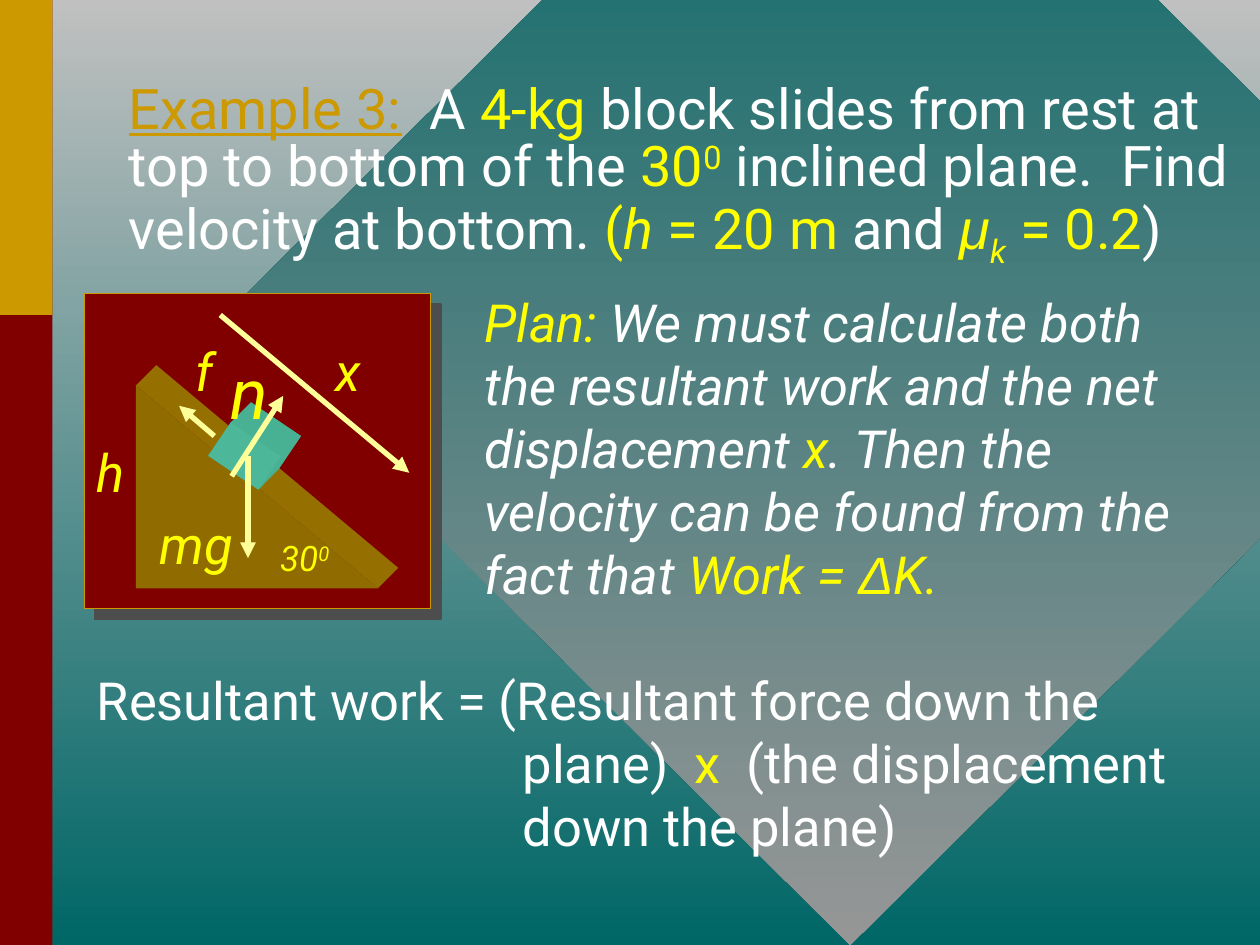
from math import cos, radians, sin

from lxml.etree import SubElement
from pptx import Presentation
from pptx.dml.color import RGBColor
from pptx.enum.shapes import MSO_CONNECTOR, MSO_SHAPE
from pptx.enum.text import MSO_ANCHOR, MSO_AUTO_SIZE, PP_ALIGN
from pptx.oxml.ns import qn
from pptx.util import Cm, Pt

COLORS = {
    "gray": "C0C0C0", "mid_gray": "969696", "teal": "006666",
    "maroon": "800000", "gold": "CC9900", "white": "FFFFFF",
    "yellow": "FFFF00", "arrow": "FFFF99", "shadow": "4D4D4D",
    "wedge": "8F6B00", "wedge_side": "957000",
    "block": "4DB899", "block_side": "48B093",
}
DEPTH = 0.41


def rgb(name):
    """Return the named palette colour."""
    return RGBColor.from_string(COLORS[name])


def set_gradient(fill, top, bottom):
    """Fill from the top colour down to the bottom colour."""
    fill.gradient()
    fill.gradient_angle = 270
    for stop, name in zip(fill.gradient_stops, (top, bottom)):
        stop.color.rgb = rgb(name)


def add_solid(shapes, kind, box, color):
    """Add a borderless flat shape; box is in centimetres."""
    sp = shapes.add_shape(kind, *map(Cm, box))
    sp.shadow.inherit = False
    sp.fill.solid()
    sp.fill.fore_color.rgb = rgb(color)
    sp.line.fill.background()
    return sp


def add_runs(p, size, runs, italic=False):
    """Add (text, colour, options) runs to a paragraph."""
    for text, color, opts in runs:
        r = p.add_run()
        r.text = text
        r.font.size = Pt(size)
        r.font.name = opts.get("font", "Roboto")
        r.font.color.rgb = rgb(color)
        r.font.italic = opts.get("italic", italic)
        r.font.underline = opts.get("underline", False)
        if "baseline" in opts:
            r.font._element.set("baseline", str(opts["baseline"] * 1000))


def add_text(shapes, box, size, runs, italic=False, wrap=True):
    """Add a text box and return it."""
    sp = shapes.add_textbox(*map(Cm, box))
    tf = sp.text_frame
    tf.word_wrap = wrap
    tf.auto_size = MSO_AUTO_SIZE.SHAPE_TO_FIT_TEXT
    add_runs(tf.paragraphs[0], size, runs, italic)
    return sp


def add_outline(shapes, points, color):
    """Add a closed polygon with points in centimetres."""
    pts = [(Cm(x), Cm(y)) for x, y in points]
    builder = shapes.build_freeform(*pts[0])
    builder.add_line_segments(pts[1:])
    sp = builder.convert_to_shape()
    sp.shadow.inherit = False
    sp.fill.solid()
    sp.fill.fore_color.rgb = rgb(color)
    sp.line.fill.background()


def add_arrow(shapes, start, end):
    """Add a force arrow from start to end, in centimetres."""
    cx = shapes.add_connector(MSO_CONNECTOR.STRAIGHT, *map(Cm, start + end))
    cx.line.color.rgb = rgb("arrow")
    cx.line.width = Pt(3)
    SubElement(cx.line._get_or_add_ln(), qn("a:tailEnd"), type="triangle")
    SubElement(cx._element.spPr, qn("a:effectLst"))


def add_backdrop(s, width, height):
    """Draw the gradient background, diamond and left band."""
    set_gradient(s.background.fill, "gray", "teal")
    diamond = add_solid(s.shapes, MSO_SHAPE.DIAMOND,
                        (4.44, -6.15, width, 25.2), "teal")
    set_gradient(diamond.fill, "teal", "mid_gray")
    add_solid(s.shapes, MSO_SHAPE.RECTANGLE, (0, 0, 1.06, height), "maroon")
    add_solid(s.shapes, MSO_SHAPE.RECTANGLE, (0, 0, 1.06, height / 3), "gold")


def add_title(s, box):
    """Place and fill the title with the problem statement."""
    sp = s.shapes.title
    s.shapes._spTree.append(sp._element)
    sp.left, sp.top, sp.width, sp.height = map(Cm, box)
    tf = sp.text_frame
    tf.word_wrap = True
    tf.auto_size = MSO_AUTO_SIZE.NONE
    tf.vertical_anchor = MSO_ANCHOR.MIDDLE
    p = tf.paragraphs[0]
    p.alignment = PP_ALIGN.LEFT
    p.line_spacing = 0.85
    add_runs(p, 32, [
        ("Example 3:", "gold", {"underline": True}),
        (" ", "gold", {}),
        (" A ", "white", {}),
        ("4-kg", "yellow", {}),
        (" block slides from rest at top to bottom of the ", "white", {}),
        ("30", "yellow", {}),
        ("0", "yellow", {"baseline": 30}),
        (" inclined plane.  Find velocity at bottom. ", "white", {}),
        ("(", "yellow", {}),
        ("h", "yellow", {"italic": True}),
        (" = 20 m", "yellow", {}),
        (" and ", "white", {}),
        ("μ", "yellow", {"italic": True, "font": "Arial"}),
        ("k", "yellow", {"italic": True, "baseline": -25}),
        (" = 0.2", "yellow", {}),
        (")", "white", {}),
    ])


def add_panel(shapes, box):
    """Add the framed panel with its hard offset shadow."""
    sp = add_solid(shapes, MSO_SHAPE.RECTANGLE, box, "maroon")
    sp.line.color.rgb = rgb("gold")
    sp.line.width = Pt(0.75)
    effects = sp._element.spPr.find(qn("a:effectLst"))
    shadow = SubElement(effects, qn("a:outerShdw"), dist=str(Pt(8.5)),
                        dir="2700000", algn="ctr", rotWithShape="0")
    SubElement(shadow, qn("a:srgbClr"), val=COLORS["shadow"])


def add_diagram(s, box):
    """Draw the inclined plane with its block, forces and labels."""
    shapes = s.shapes.add_group_shape().shapes
    left, top = box[:2]

    def at(x, y):
        return left + x, top + y

    def back(point):
        return point[0] + DEPTH, point[1] - DEPTH

    add_panel(shapes, box)
    x, y, w, h = 1.04, 1.85, 4.88, 4.09
    peak, toe = at(x, y), at(x + w, y + h)
    add_outline(shapes, [peak, back(peak), back(toe), toe], "wedge_side")
    add_solid(shapes, MSO_SHAPE.RIGHT_TRIANGLE, (*peak, w, h), "wedge")

    x, y, w, h, tilt = 2.62, 2.87, 1.22, 0.81, 34
    c, d = cos(radians(tilt)), sin(radians(tilt))
    a, b, e, f = [
        at(x + w / 2 + (i * w * c - j * h * d) / 2,
           y + h / 2 + (i * w * d + j * h * c) / 2)
        for i, j in ((-1, -1), (1, -1), (1, 1), (-1, 1))]
    add_outline(shapes, [f, a, back(a), back(b), back(e), e], "block_side")
    block = add_solid(shapes, MSO_SHAPE.RECTANGLE, (*at(x, y), w, h), "block")
    block.rotation = tilt

    for start, end in (((3.3, 3.28), (3.3, 5.33)), ((2.97, 3.68), (4.01, 2.06)),
                       ((2.62, 2.87), (1.91, 2.26)), ((2.74, 0.43), (6.55, 3.61))):
        add_arrow(shapes, at(*start), at(*end))

    for text, size, x, y, w, h in (
            ("h", 30, 0, 2.82, 1.04, 1.52), ("30", 20, 3.66, 4.78, 1.57, 1.09),
            ("n", 40, 2.62, 0.99, 1.4, 1.96), ("f", 30, 1.91, 0.79, 1.04, 1.52),
            ("mg", 30, 0.86, 4.27, 2.79, 1.52), ("x", 30, 4.7, 0.79, 1.22, 1.52)):
        runs = [(text, "yellow", {})]
        if text == "30":
            runs.append(("0", "yellow", {"baseline": 30}))
        sp = add_text(shapes, (*at(x, y), w, h), size, runs, True, False)
        sp.text_frame.vertical_anchor = MSO_ANCHOR.MIDDLE
        sp.text_frame.paragraphs[0].alignment = PP_ALIGN.CENTER


def add_plan(s, box):
    """Add the plan for solving the problem."""
    sp = add_text(s.shapes, box, 30, [
        ("Plan: ", "yellow", {}),
        ("We must calculate both the resultant work and the net displacement ",
         "white", {}),
        ("x", "yellow", {}),
        (". Then the velocity can be found from the fact that ", "white", {}),
        ("Work = ", "yellow", {}),
        ("Δ", "yellow", {"font": "Arial"}),
        ("K.", "yellow", {}),
    ], True)
    sp.text_frame.vertical_anchor = MSO_ANCHOR.MIDDLE


def add_work(s, box):
    """Add the resultant work statement with a hanging indent."""
    sp = add_text(s.shapes, box, 30, [
        ("Resultant work = (Resultant force down the plane)  ", "white", {}),
        ("x", "yellow", {}),
        ("  (the displacement down the plane)", "white", {}),
    ])
    pPr = sp.text_frame.paragraphs[0]._p.get_or_add_pPr()
    pPr.set("marL", str(Cm(8.59)))
    pPr.set("indent", str(-Cm(8.59)))


def main():
    """Build and save the slide."""
    prs = Presentation()
    prs.slide_width, prs.slide_height = Cm(25.4), Cm(19.05)
    s = prs.slides.add_slide(prs.slide_layouts[5])
    add_backdrop(s, 25.4, 19.05)
    add_title(s, (2.34, 1.9, 23.06, 3.18))
    add_diagram(s, (1.7, 5.92, 6.98, 6.35))
    add_plan(s, (9.52, 5.72, 14.4, 6.6))
    add_work(s, (1.7, 13.34, 23.06, 4.06))
    prs.save("out.pptx")


if __name__ == "__main__":
    main()
